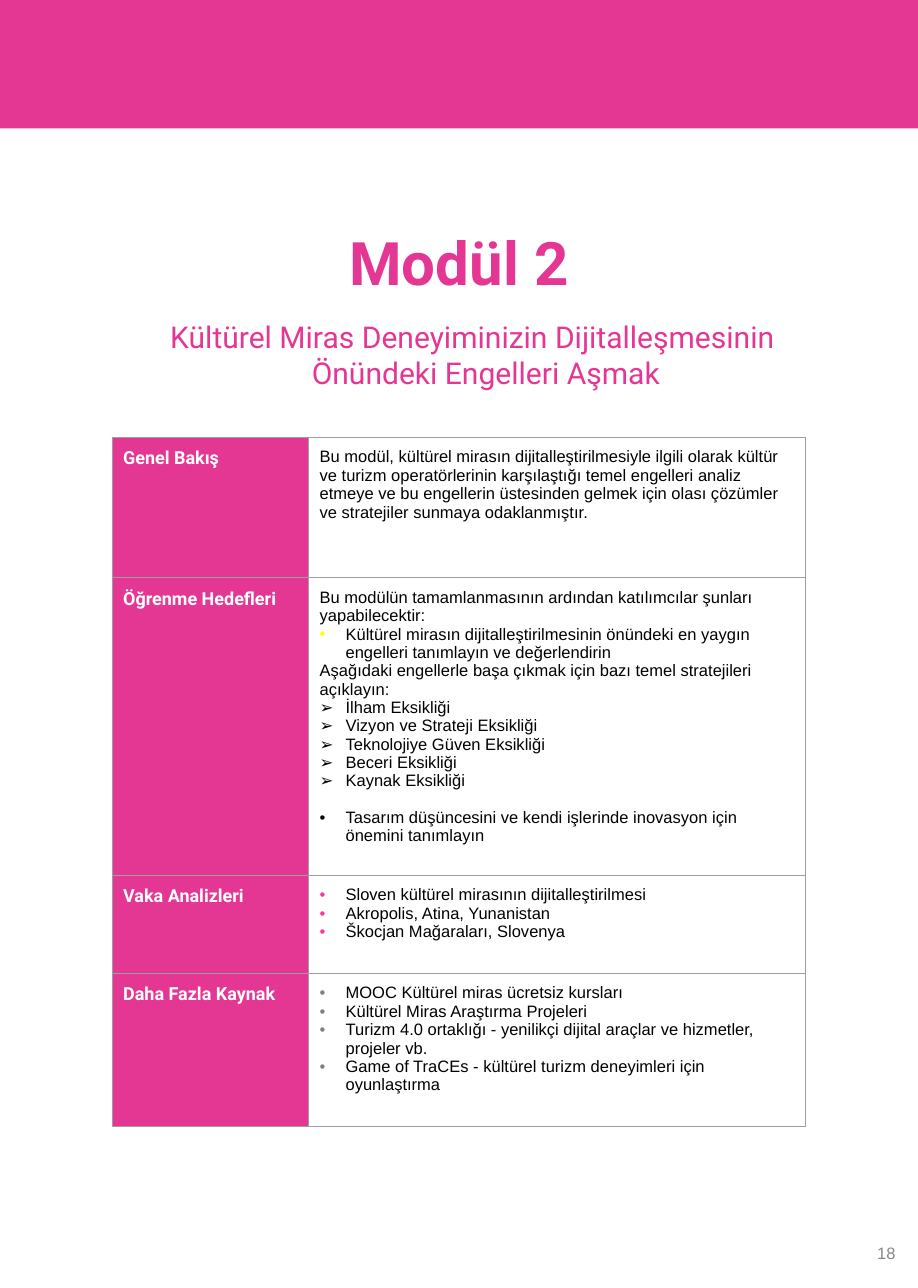
from dataclasses import dataclass

from lxml import etree
from pptx import Presentation
from pptx.dml.color import RGBColor
from pptx.enum import shapes, text
from pptx.oxml import ns
from pptx.util import Inches, Pt

WIDTH, HEIGHT = 8.5, 11.93
LEFT, CENTER, RIGHT = text.PP_ALIGN.LEFT, text.PP_ALIGN.CENTER, text.PP_ALIGN.RIGHT
TOP, MIDDLE = text.MSO_ANCHOR.TOP, text.MSO_ANCHOR.MIDDLE


@dataclass(frozen=True)
class Theme:
    pink: str = "E43794"
    white: str = "FFFFFF"
    ink: str = "000000"
    border: str = "9E9E9E"
    muted: str = "888888"
    heading_font: str = "Roboto"
    body_font: str = "Arial"
    title: int = 40
    subtitle: int = 20
    label: int = 12
    body: int = 11


THEME = Theme()


@dataclass(frozen=True)
class Item:
    words: str
    bullet: str = ""
    bullet_color: str = THEME.ink
    before: float = 0


def bulleted(lines, bullet, color=THEME.ink):
    return [Item(line, bullet, color) for line in lines]


# Module content: label, row height, paragraphs
SECTIONS = [
    ("Genel Bakış", 1.3, [Item(
        "Bu modül, kültürel mirasın dijitalleştirilmesiyle ilgili olarak kültür ve turizm "
        "operatörlerinin karşılaştığı temel engelleri analiz etmeye ve bu engellerin üstesinden "
        "gelmek için olası çözümler ve stratejiler sunmaya odaklanmıştır.")]),
    ("Öğrenme Hedefleri", 2.57, [
        Item("Bu modülün tamamlanmasının ardından katılımcılar şunları yapabilecektir:"),
        Item("Kültürel mirasın dijitalleştirilmesinin önündeki en yaygın engelleri tanımlayın "
             "ve değerlendirin", "•", "FFFF00"),
        Item("Aşağıdaki engellerle başa çıkmak için bazı temel stratejileri açıklayın:"),
        *bulleted(["İlham Eksikliği", "Vizyon ve Strateji Eksikliği",
                   "Teknolojiye Güven Eksikliği", "Beceri Eksikliği", "Kaynak Eksikliği"], "➢"),
        Item("Tasarım düşüncesini ve kendi işlerinde inovasyon için önemini tanımlayın",
             "•", before=12.2)]),
    ("Vaka Analizleri", 0.91, bulleted(
        ["Sloven kültürel mirasının dijitalleştirilmesi", "Akropolis, Atina, Yunanistan",
         "Škocjan Mağaraları, Slovenya"], "•", "FF3399")),
    ("Daha Fazla Kaynak", 1.42, bulleted(
        ["MOOC Kültürel miras ücretsiz kursları", "Kültürel Miras Araştırma Projeleri",
         "Turizm 4.0 ortaklığı - yenilikçi dijital araçlar ve hizmetler, projeler vb.",
         "Game of TraCEs - kültürel turizm deneyimleri için oyunlaştırma"], "•", "808080")),
]


def add_xml(parent, tag, **attributes):
    return etree.SubElement(parent, ns.qn(tag), attributes)


def set_indent(paragraph, margin, first):
    properties = paragraph._p.get_or_add_pPr()
    properties.set("marL", str(Inches(margin)))
    properties.set("indent", str(Inches(first)))
    return properties


def write(frame, items, size=THEME.body, color=THEME.ink, font=THEME.body_font, bold=False,
          align=LEFT, spacing=None, indent=None):
    """Fill a text frame with items, one paragraph each."""
    frame.word_wrap = True
    for number, item in enumerate(items):
        paragraph = frame.add_paragraph() if number else frame.paragraphs[0]
        if indent:
            set_indent(paragraph, *indent)
        if item.bullet:
            properties = set_indent(paragraph, 0.24, -0.24)
            add_xml(add_xml(properties, "a:buClr"), "a:srgbClr", val=item.bullet_color)
            add_xml(properties, "a:buFont", typeface=THEME.body_font)
            add_xml(properties, "a:buChar", char=item.bullet)
        paragraph.alignment = align
        if spacing:
            paragraph.line_spacing = spacing
        if item.before:
            paragraph.space_before = Pt(item.before)
        run = paragraph.add_run()
        run.text = item.words
        run.font.size, run.font.name, run.font.bold = Pt(size), font, bold
        run.font.color.rgb = RGBColor.from_string(color)


def add_text(slide, box, words, anchor=TOP, **style):
    frame = slide.shapes.add_textbox(*map(Inches, box)).text_frame
    frame.vertical_anchor = anchor
    write(frame, [Item(words)], **style)


def add_banner(slide, box):
    banner = slide.shapes.add_shape(shapes.MSO_SHAPE.RECTANGLE, *map(Inches, box))
    banner.shadow.inherit = False
    banner.fill.solid()
    banner.fill.fore_color.rgb = RGBColor.from_string(THEME.pink)
    banner.line.fill.background()


def add_heading(slide, box):
    left, top, width, height = box
    title_height = height * 0.53
    style = dict(color=THEME.pink, font=THEME.heading_font, align=CENTER)
    add_text(slide, (left, top, width, title_height), "Modül 2",
             size=THEME.title, bold=True, spacing=0.9, **style)
    add_text(slide, (left, top + title_height, width, height - title_height),
             "Kültürel Miras Deneyiminizin Dijitalleşmesinin Önündeki Engelleri Aşmak",
             size=THEME.subtitle, indent=(0.5, -0.25), **style)


def format_cell(cell, fill=None):
    cell.margin_left = cell.margin_right = Inches(0.1)
    cell.margin_top = cell.margin_bottom = Inches(0.1)
    cell.vertical_anchor = TOP
    properties = cell._tc.get_or_add_tcPr()
    for side in "LRTB":
        line = add_xml(properties, f"a:ln{side}", w=str(Pt(0.75)))
        add_xml(add_xml(line, "a:solidFill"), "a:srgbClr", val=THEME.border)
    if fill:
        cell.fill.solid()
        cell.fill.fore_color.rgb = RGBColor.from_string(fill)
    else:
        cell.fill.background()


def add_sections(slide, box):
    table = slide.shapes.add_table(len(SECTIONS), 2, *map(Inches, box)).table
    table.first_row = table.horz_banding = False
    label_width = 1.82
    for column, width in zip(table.columns, (label_width, box[2] - label_width)):
        column.width = Inches(width)
    for number, (label, height, items) in enumerate(SECTIONS):
        table.rows[number].height = Inches(height)
        label_cell, content_cell = table.cell(number, 0), table.cell(number, 1)
        format_cell(label_cell, THEME.pink)
        format_cell(content_cell)
        write(label_cell.text_frame, [Item(label)], size=THEME.label, color=THEME.white,
              font=THEME.heading_font, bold=True)
        write(content_cell.text_frame, items)


def main():
    deck = Presentation()
    deck.slide_width, deck.slide_height = Inches(WIDTH), Inches(HEIGHT)
    slide = deck.slides.add_slide(deck.slide_layouts[6])
    add_banner(slide, (0, 0, WIDTH, 1.19))
    add_heading(slide, (1.1, 2.12, WIDTH - 2 * 1.1, 1.48))
    add_sections(slide, (1.04, 4.05, WIDTH - 2 * 1.04, sum(row[1] for row in SECTIONS)))
    # Page number
    add_text(slide, (5.39, 11.41, 3, 0.4), "18", anchor=MIDDLE, color=THEME.muted, align=RIGHT)
    deck.save("out.pptx")


if __name__ == "__main__":
    main()
